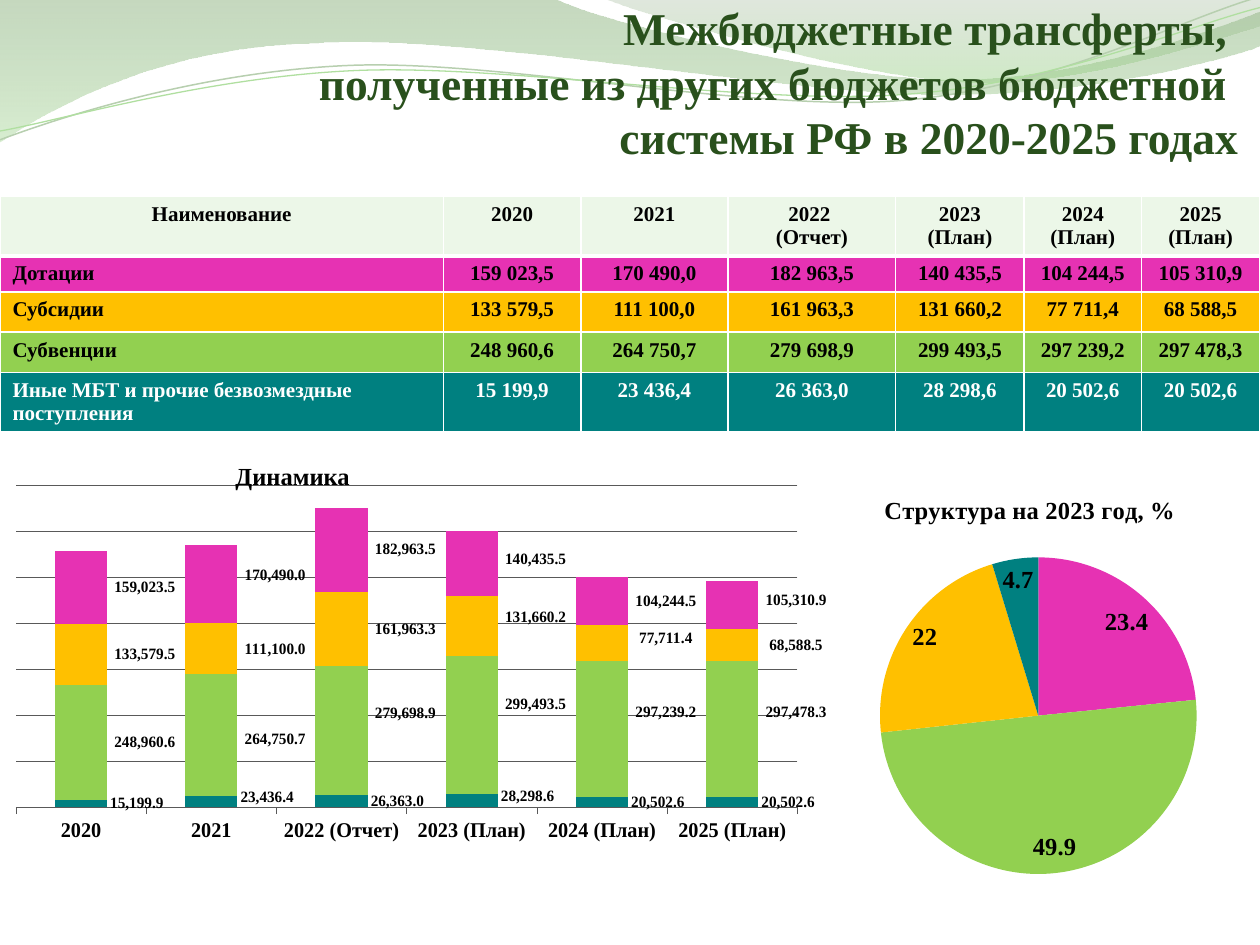
import lxml.etree
import pptx
import pptx.chart.data
import pptx.dml.color
import pptx.enum.chart
import pptx.enum.text
import pptx.oxml
import pptx.oxml.ns
import pptx.util

Inches = pptx.util.Inches
Pt = pptx.util.Pt
ALIGN = pptx.enum.text.PP_ALIGN
ANCHOR = pptx.enum.text.MSO_ANCHOR
CHART = pptx.enum.chart.XL_CHART_TYPE
qn = pptx.oxml.ns.qn

PINK, AMBER, GREEN, TEAL = "E632B3", "FFC000", "92D050", "008080"
HEADER = ["Наименование", "2020", "2021", "2022 \n(Отчет)", "2023 (План)", "2024 (План)", "2025 (План)"]
TRANSFERS = [
    (PINK, "Дотации", ["159 023,5", "170 490,0", "182 963,5", "140 435,5", "104 244,5", "105 310,9"]),
    (AMBER, "Субсидии", ["133 579,5", "111 100,0", "161 963,3", "131 660,2", "77 711,4", "68 588,5"]),
    (GREEN, "Субвенции", ["248 960,6", "264 750,7", "279 698,9", "299 493,5", "297 239,2", "297 478,3"]),
    (TEAL, "Иные МБТ и прочие безвозмездные поступления",
     ["15 199,9", "23 436,4", "26 363,0", "28 298,6", "20 502,6", "20 502,6"]),
]
LABEL_SHIFTS = [
    (0.07, [0, -0.01, 0, -0.01, 0, 0]),
    (0.08, [0, 0.01, -0.04, -0.05, -0.04, -0.04]),
    (0.08, [0, 0, 0, -0.02, -0.01, 0]),
    (0.08, [0, -0.02, 0, -0.01, 0, -0.01]),
]
WAVES = [
    ((0, 0), [(4.4, -0.01), (4.76, 0.17, 6.64, 0.63, 7.58, 0.63), (8.53, 0.63, 9.58, 0.26, 10, 0.09),
              (10.01, 0.36), (9.83, 0.44, 8.7, 0.76, 7.46, 0.75), (6.22, 0.75, 3.82, 0.28, 2.57, 0.34),
              (1.29, 0.36, 0.46, 0.83, -0.01, 1.13)], [("80AA72", 45), ("B7DFAA", 55)]),
    ((4.79, -0.01), [(5.09, 0.11, 6.82, 0.62, 7.69, 0.65), (8.56, 0.69, 9.61, 0.32, 10, 0.21), (10, 0)],
     [("97B28E", 30), ("96D082", 45)]),
]
STRANDS = [
    ((0, 1.11), [(0.48, 0.93, 1.58, 0.57, 2.77, 0.52), (3.95, 0.47, 5.93, 0.89, 7.13, 0.8),
                 (8.33, 0.71, 9.38, 0.15, 9.98, -0.02)], "B7CFAF", 0.85),
    ((0, 1.04), [(0.47, 0.96, 1.64, 0.61, 2.83, 0.56), (4.03, 0.51, 5.97, 0.84, 7.17, 0.75),
                 (8.36, 0.67, 9.41, 0.21, 10, 0.06)], "B0DFA0", 0.75),
]


def color(value):
    return pptx.dml.color.RGBColor.from_string(value)


def xml(text, prefix):
    head, mark, tail = text.partition(">")
    head, slash = (head[:-1], "/") if head.endswith("/") else (head, "")
    return pptx.oxml.parse_xml(f"{head} {pptx.oxml.ns.nsdecls(prefix)}{slash}{mark}{tail}")


def amount(text):
    return float(text.replace(" ", "").replace(",", "."))


def manual_layout(**entries):
    layout = xml("<c:layout><c:manualLayout/></c:layout>", "c")
    for tag, value in entries.items():
        lxml.etree.SubElement(layout[0], qn(f"c:{tag}")).set("val", str(value))
    return layout


class SlideBuilder:
    """Holds the text style and the current slide and adds each kind of element."""

    def __init__(self, slide, font="Times New Roman"):
        self.slide = slide
        self.font = font

    def style(self, font, size, value="000000"):
        font.name, font.size, font.bold = self.font, Pt(size), True
        font.color.rgb = color(value)

    def freeform(self, start, segments, closed):
        builder = self.slide.shapes.build_freeform(*map(Inches, start), scale=1.0)
        builder.add_line_segments([tuple(map(Inches, segment[-2:])) for segment in segments], close=closed)
        shape = builder.convert_to_shape()
        shape.shadow.inherit = False
        for line, segment in zip(list(shape._element.iter(qn("a:lnTo"))), segments):
            if len(segment) == 6:
                points = "".join(f'<a:pt x="{Inches(x) - shape.left}" y="{Inches(y) - shape.top}"/>'
                                 for x, y in zip(segment[::2], segment[1::2]))
                line.getparent().replace(line, xml(f"<a:cubicBezTo>{points}</a:cubicBezTo>", "a"))
        return shape

    def wave(self, start, segments, stops):
        shape = self.freeform(start, segments, True)
        shape.line.fill.background()
        shape.fill.gradient()
        gradient = shape._element.spPr.find(qn("a:gradFill"))
        stop_xml = "".join(
            f'<a:gs pos="{index * 100000}"><a:srgbClr val="{value}"><a:alpha val="{alpha * 1000}"/></a:srgbClr></a:gs>'
            for index, (value, alpha) in enumerate(stops))
        gradient.getparent().replace(gradient, xml(
            f'<a:gradFill><a:gsLst>{stop_xml}</a:gsLst><a:lin ang="5400000" scaled="0"/></a:gradFill>', "a"))

    def strand(self, start, segments, value, width):
        shape = self.freeform(start, segments, False)
        shape.fill.background()
        shape.line.color.rgb = color(value)
        shape.line.width = Pt(width)

    def text(self, box, lines, size, value="000000", align=ALIGN.LEFT, anchor=ANCHOR.TOP):
        frame = self.slide.shapes.add_textbox(*map(Inches, box)).text_frame
        frame.word_wrap = True
        frame.vertical_anchor = anchor
        frame.text = "\n".join(lines)
        for paragraph in frame.paragraphs:
            paragraph.alignment = align
            self.style(paragraph.font, size, value)

    def cell(self, cell, text, fill, value, align, top=1, bottom=1):
        cell.text = text
        cell.fill.solid()
        cell.fill.fore_color.rgb = color(fill)
        for paragraph in cell.text_frame.paragraphs:
            paragraph.alignment = align
            self.style(paragraph.font, 12, value)
        for index, (side, width) in enumerate([("L", 1), ("R", 1), ("T", top), ("B", bottom)]):
            cell._tc.get_or_add_tcPr().insert(index, xml(
                f'<a:ln{side} w="{width * 12700}"><a:solidFill><a:srgbClr val="FFFFFF"/></a:solidFill></a:ln{side}>',
                "a"))

    def table(self, box, widths, heights):
        table = self.slide.shapes.add_table(len(heights), len(widths), *map(Inches, box)).table
        for column, width in zip(table.columns, widths):
            column.width = Inches(width)
        for row, height in zip(table.rows, heights):
            row.height = Inches(height)
        for index, text in enumerate(HEADER):
            self.cell(table.cell(0, index), text, "ECF7E8", "000000", ALIGN.CENTER, bottom=3)
        for row, (fill, name, values) in enumerate(TRANSFERS, 1):
            value = "FFFFFF" if fill == TEAL else "000000"
            for index, text in enumerate([name, *values]):
                align = ALIGN.CENTER if index else ALIGN.LEFT
                self.cell(table.cell(row, index), text, fill, value, align, top=3 if row == 1 else 1)

    def chart(self, kind, box, data, plot_box):
        chart = self.slide.shapes.add_chart(kind, *map(Inches, box), data).chart
        chart.has_legend = False
        chart.has_title = False
        chart.font.name, chart.font.size = self.font, Pt(18)
        area = chart._chartSpace.chart.plotArea
        for layout in area.findall(qn("c:layout")):
            area.remove(layout)
        x, y, width, height = plot_box
        area.insert(0, manual_layout(layoutTarget="inner", xMode="edge", yMode="edge", x=x, y=y, w=width, h=height))
        return chart

    def labels(self, series, shifts, size, number_format, position=None):
        series.data_labels.show_value = True
        self.style(series.data_labels.font, size)
        for index, (x, y) in enumerate(shifts):
            data_label = series.points[index].data_label
            self.style(data_label.font, size)
            if position is not None:
                data_label.position = position
            label = data_label._get_or_add_dLbl()
            label.insert(1, manual_layout(x=x, y=y))
            label.insert(2, xml(f'<c:numFmt formatCode="{number_format}" sourceLinked="0"/>', "c"))
        group = series._element.find(qn("c:dLbls"))
        for leader in group.findall(qn("c:showLeaderLines")):
            group.remove(leader)
        group.append(xml('<c:showLeaderLines val="0"/>', "c"))
        group.append(xml(
            '<c:extLst><c:ext uri="{CE6537A1-D6FC-4f65-9D91-7224C49458BB}" '
            'xmlns:c15="http://schemas.microsoft.com/office/drawing/2012/chart">'
            '<c15:showLeaderLines val="0"/></c:ext></c:extLst>', "c"))

    def stacked_columns(self, box, plot_box):
        data = pptx.chart.data.CategoryChartData(number_format="#,##0.0")
        data.categories = [text.replace("\n", "") for text in HEADER[1:]]
        layers = TRANSFERS[::-1]
        for number, (_, _, values) in enumerate(layers, 1):
            data.add_series(f"Series {number}", [amount(text) for text in values])
        chart = self.chart(CHART.COLUMN_STACKED, box, data, plot_box)
        plot = chart.plots[0]
        plot.gap_width, plot.overlap = 150, 100
        axis = chart.value_axis
        axis.visible = False
        axis.minimum_scale, axis.maximum_scale, axis.major_unit = 0, 700000, 100000
        for line in (axis.major_gridlines.format.line, chart.category_axis.format.line):
            line.color.rgb = color("595959")
            line.width = Pt(0.25)
        self.style(chart.category_axis.tick_labels.font, 12)
        for series, (fill, _, _), (shift, rises) in zip(plot.series, layers, LABEL_SHIFTS):
            series.format.fill.solid()
            series.format.fill.fore_color.rgb = color(fill)
            self.labels(series, [(shift, rise) for rise in rises], 9, "#,##0.0")

    def pie(self, box, plot_box, title, values, fills, shifts):
        data = pptx.chart.data.CategoryChartData()
        data.categories = [str(number) for number in range(1, len(values) + 1)]
        data.add_series("Series 1", values)
        chart = self.chart(CHART.PIE, box, data, plot_box)
        chart.chart_title.text_frame.text = title
        self.style(chart.chart_title.text_frame.paragraphs[0].font, 14)
        heading = chart._chartSpace.chart.find(qn("c:title"))
        for layout in heading.findall(qn("c:layout")):
            heading.remove(layout)
        heading.insert(1, manual_layout(xMode="edge", yMode="edge", x=0.16, y=0.06))
        chart.plots[0].vary_by_categories = True
        series = chart.plots[0].series[0]
        self.labels(series, shifts, 14, "General", pptx.enum.chart.XL_LABEL_POSITION.INSIDE_END)
        for index, fill in enumerate(fills):
            point_fill = series.points[index].format.fill
            point_fill.solid()
            point_fill.fore_color.rgb = color(fill)


presentation = pptx.Presentation()
presentation.slide_width, presentation.slide_height = Inches(10), Inches(7.5)
builder = SlideBuilder(presentation.slides.add_slide(presentation.slide_layouts[6]))
for wave in WAVES:
    builder.wave(*wave)
for strand in STRANDS:
    builder.strand(*strand)
builder.table((0, 1.56, 10, 1.94), [3.52, 1.09, 1.17, 1.33, 1.02, 0.93, 0.94], [0.47, 0.28, 0.32, 0.32, 0.47])
builder.stacked_columns((0, 3.75, 6.56, 3.36), (0.02, 0.03, 0.98, 0.76))
builder.pie((6.41, 3.67, 3.59, 3.59), (0.1, 0.21, 0.82, 0.7), "Структура на 2023 год, %", [23.4, 49.9, 22, 4.7],
            [PINK, GREEN, AMBER, TEAL], [(0.02, 0.01), (0.05, -0.01), (0, -0.02), (-0.03, 0)])
builder.text((1.77, 3.61, 1.25, 0.34), ["Динамика"], 14)
builder.text((1.44, 0.17, 8.49, 0.96), ["Межбюджетные трансферты, ", "полученные из других бюджетов бюджетной ",
             "системы РФ в 2020-2025 годах"], 26, "29501C", ALIGN.RIGHT, ANCHOR.MIDDLE)
presentation.save("out.pptx")
